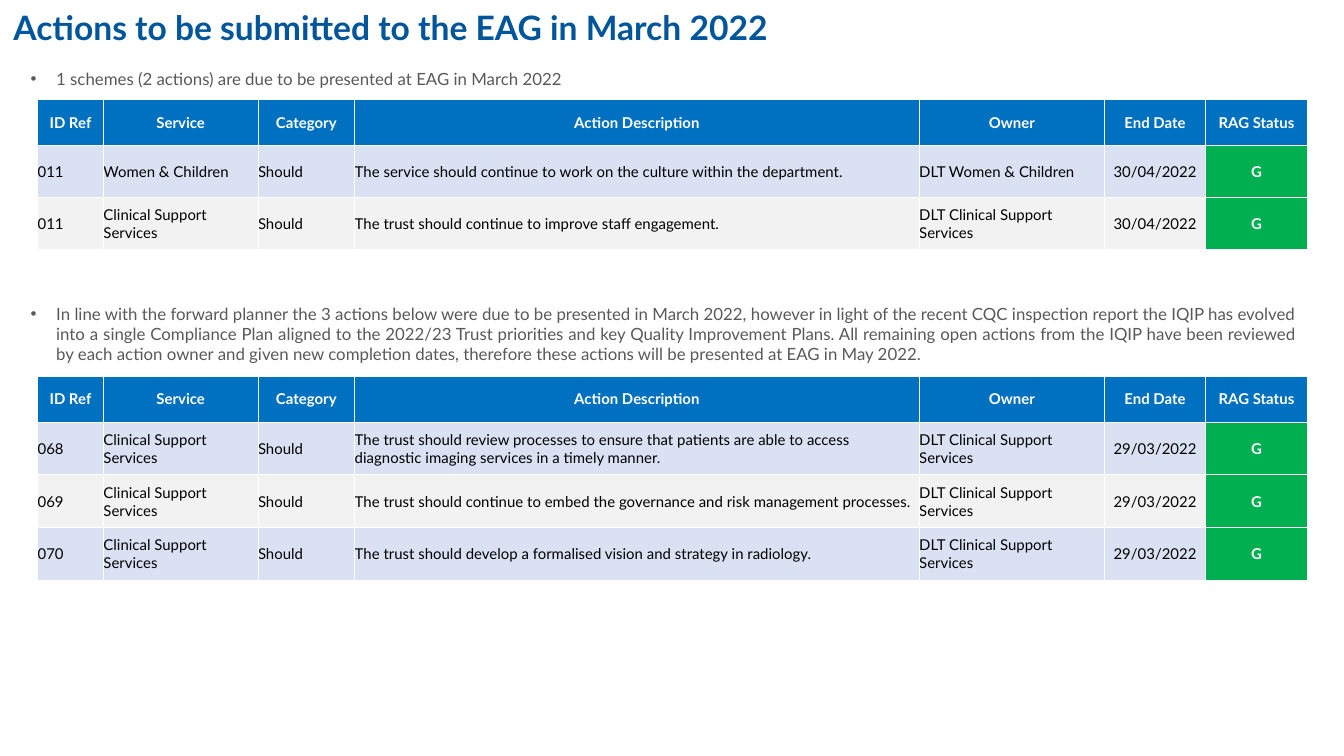
"""Build the slide of actions to be submitted to the EAG in March 2022."""
from dataclasses import dataclass

from lxml import etree
from pptx import Presentation
from pptx import util as u
from pptx.dml.color import RGBColor
from pptx.enum import text
from pptx.oxml import ns

NAVY = RGBColor(0x00, 0x55, 0x9B)
BLUE = RGBColor(0x00, 0x70, 0xC0)
PALE = RGBColor(0xD9, 0xE1, 0xF2)
LIGHT = RGBColor(0xF2, 0xF2, 0xF2)
GREEN = RGBColor(0x00, 0xB0, 0x50)
GREY = RGBColor(0x59, 0x59, 0x59)
WHITE = RGBColor(0xFF, 0xFF, 0xFF)
BLACK = RGBColor(0x00, 0x00, 0x00)
FONT = "Lato"
HEADS = ("ID Ref", "Service", "Category", "Action Description", "Owner", "End Date", "RAG Status")
WIDTHS = (0.49, 1.15, 0.72, 4.2, 1.38, 0.75, 0.76)
DATE, RAG = 5, 6
HEAD_H = 0.34


@dataclass
class Action:
    ref: str
    team: str
    task: str
    end: str

    def cells(self) -> tuple[str, ...]:
        return (self.ref, self.team, "Should", self.task, f"DLT {self.team}", self.end, "G")


@dataclass
class Section:
    note: str
    note_top: float
    note_h: float
    top: float
    high: float
    actions: list[Action]


WOMEN, CLINIC = "Women & Children", "Clinical Support Services"
APRIL, MARCH = "30/04/2022", "29/03/2022"
SECTIONS = [
    Section(
        "1 schemes (2 actions) are due to be presented at EAG in March 2022",
        0.46, 0.4, 0.74, 1.12,
        [
            Action("011", WOMEN, "The service should continue to work on the culture "
                   "within the department.", APRIL),
            Action("011", CLINIC, "The trust should continue to improve staff engagement.", APRIL),
        ],
    ),
    Section(
        "In line with the forward planner the 3 actions below were due to be presented in "
        "March 2022, however in light of the recent CQC inspection report the IQIP has evolved "
        "into a single Compliance Plan aligned to the 2022/23 Trust priorities and key Quality "
        "Improvement Plans. All remaining open actions from the IQIP have been reviewed by each "
        "action owner and given new completion dates, therefore these actions will be presented "
        "at EAG in May 2022.",
        2.21, 0.56, 2.8, 1.52,
        [
            Action("068", CLINIC, "The trust should review processes to ensure that patients are "
                   "able to access diagnostic imaging services in a timely manner.", MARCH),
            Action("069", CLINIC, "The trust should continue to embed the governance and risk "
                   "management processes.", MARCH),
            Action("070", CLINIC, "The trust should develop a formalised vision and strategy "
                   "in radiology.", MARCH),
        ],
    ),
]


def style(para, size: float, color: RGBColor, bold: bool, align) -> None:
    para.alignment = align
    font = para.font
    font.name, font.size, font.bold = FONT, u.Pt(size), bold
    font.color.rgb = color


def add_title(slide, words: str) -> None:
    title = slide.shapes.title
    title.left, title.top = u.Inches(0), u.Inches(0)
    title.width, title.height = u.Inches(10), u.Inches(0.46)
    frame = title.text_frame
    frame.text = words
    frame.auto_size = text.MSO_AUTO_SIZE.NONE
    frame.vertical_anchor = text.MSO_ANCHOR.TOP
    style(frame.paragraphs[0], 18, NAVY, True, text.PP_ALIGN.LEFT)


def add_note(slide, part: Section) -> None:
    box = slide.shapes.add_textbox(
        u.Inches(0.13), u.Inches(part.note_top), u.Inches(9.6), u.Inches(part.note_h))
    frame = box.text_frame
    frame.word_wrap = True
    para = frame.paragraphs[0]
    para.text = part.note
    props = para._p.get_or_add_pPr()
    props.set("marL", str(u.Inches(0.19)))
    props.set("indent", str(-u.Inches(0.19)))
    etree.SubElement(props, ns.qn("a:buFont"), typeface="Arial")
    etree.SubElement(props, ns.qn("a:buChar"), char="•")
    style(para, 9, GREY, False, text.PP_ALIGN.JUSTIFY)


def add_edges(cell) -> None:
    props = cell._tc.get_or_add_tcPr()
    for side in "LRTB":
        edge = etree.SubElement(props, ns.qn(f"a:ln{side}"), w=str(u.Pt(0.5)))
        fill = etree.SubElement(edge, ns.qn("a:solidFill"))
        etree.SubElement(fill, ns.qn("a:srgbClr"), val=str(WHITE))


def fill_cell(cell, words: str, row: int, col: int) -> None:
    cell.margin_left = cell.margin_right = cell.margin_top = cell.margin_bottom = 0
    cell.vertical_anchor = text.MSO_ANCHOR.MIDDLE
    add_edges(cell)
    cell.fill.solid()
    if row == 0:
        back = BLUE
    elif col == RAG:
        back = GREEN
    else:
        back = PALE if row % 2 else LIGHT
    cell.fill.fore_color.rgb = back
    cell.text = words
    strong = row == 0 or col == RAG
    align = text.PP_ALIGN.CENTER if strong or col == DATE else text.PP_ALIGN.LEFT
    style(cell.text_frame.paragraphs[0], 8, WHITE if strong else BLACK, strong, align)


def add_grid(slide, part: Section) -> None:
    rows = [HEADS] + [action.cells() for action in part.actions]
    row_h = (part.high - HEAD_H) / len(part.actions)
    table = slide.shapes.add_table(
        len(rows), len(HEADS), u.Inches(0.28), u.Inches(part.top),
        u.Inches(sum(WIDTHS)), u.Inches(part.high)).table
    for col, wide in zip(table.columns, WIDTHS):
        col.width = u.Inches(wide)
    for r, row in enumerate(rows):
        table.rows[r].height = u.Inches(row_h if r else HEAD_H)
        for c, words in enumerate(row):
            fill_cell(table.cell(r, c), words, r, c)


def main() -> None:
    deck = Presentation()
    deck.slide_width, deck.slide_height = u.Inches(10), u.Inches(10 * 9 / 16)
    slide = deck.slides.add_slide(deck.slide_layouts.get_by_name("Title Only"))
    add_title(slide, "Actions to be submitted to the EAG in March 2022")
    for part in SECTIONS:
        add_note(slide, part)
        add_grid(slide, part)
    deck.save("out.pptx")


if __name__ == "__main__":
    main()
